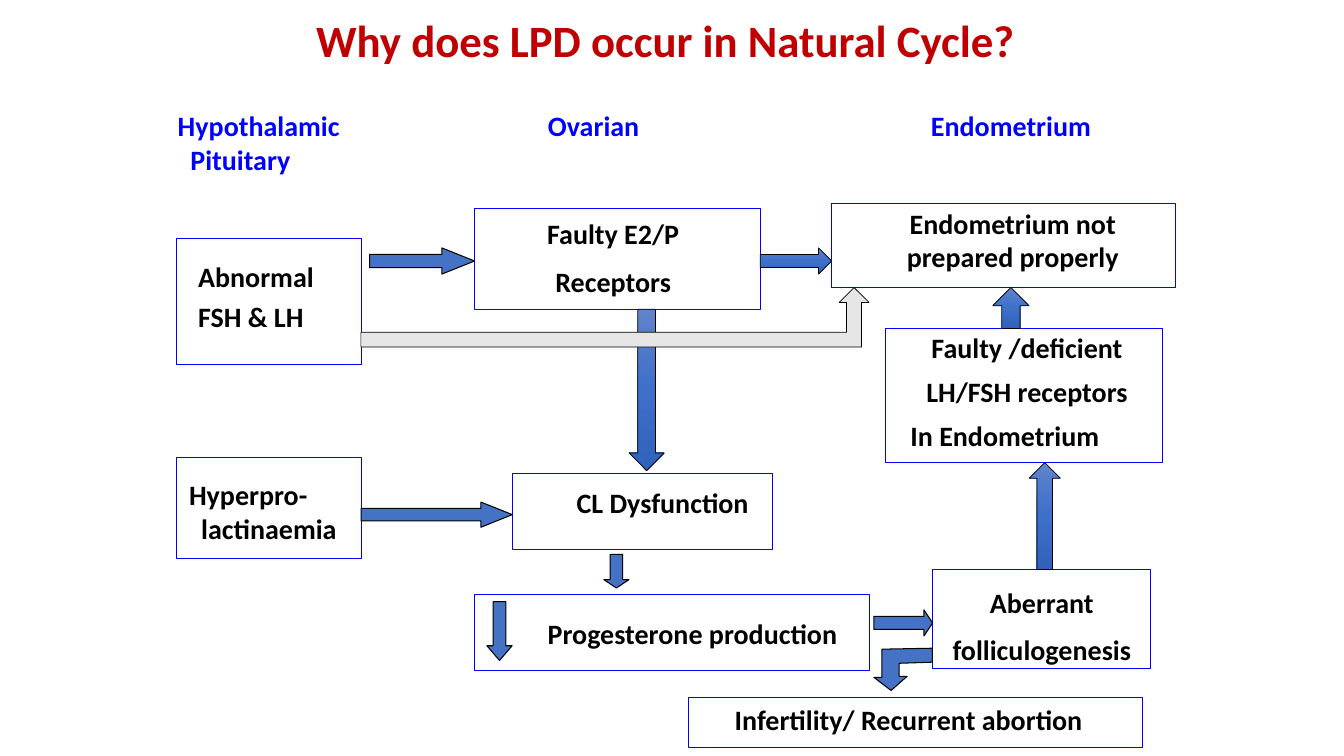
import copy
import pptx
import pptx.util
import pptx.dml.color
import pptx.enum.shapes
import pptx.enum.text
import pptx.oxml.ns

Pt = pptx.util.Pt
ALIGN = pptx.enum.text.PP_ALIGN
PRESET = pptx.enum.shapes.MSO_SHAPE

COLORS = {
    "title": "C00000", "heading": "0000FF", "text": "000000", "frame": "0000FF",
    "arrow": "4472C4", "outline": "000000", "bypass": "E7E6E6",
}
GRADIENT = [(0, "6183CB"), (0.5, "3E70CA"), (1, "3062BB")]
FONT = "Calibri"
LINE_HEIGHT = 24.4  # one line of 20 pt text

TITLE = "Why does LPD occur in Natural Cycle?"

# Headings: left, centre y, lines, indents
HEADINGS = [
    (127, 101.8, ["Hypothalamic", "Pituitary"], [0, 9]),
    (391.4, 89.3, ["Ovarian"], [0]),
    (665, 89.3, ["Endometrium"], [0]),
]

# Left-aligned labels: left, centre y, line pitch, lines, left indents
LEFT_LABELS = [
    (141.5, 211.8, 29.4, ["Abnormal", "FSH & LH"], [0, 0]),
    (135, 365, 24.4, ["Hyperpro-", "lactinaemia"], [0, 8.7]),
]

# Centred labels: centre x, centre y, line pitch, lines, right indents
CENTRED_LABELS = [
    (439.2, 183.6, 34.4, ["Faulty E2/P", "Receptors"], [2.4, 0]),
    (724.5, 171.4, 24.4, ["Endometrium not", "prepared properly"], [2, 0]),
    (733.6, 279.5, 31.8,
     ["Faulty /deficient", "LH/FSH receptors", "In Endometrium"], [0, 0, 31.5]),
    (473.3, 358.6, 24.4, ["CL Dysfunction"], [0]),
    (494.6, 452, 24.4, ["Progesterone production"], [0]),
    (747, 447, 34.4, ["Aberrant", "folliculogenesis"], [5.6, 0]),
    (649, 513.6, 24.4, ["Infertility/ Recurrent abortion"], [0]),
]

# Frames: left, top, width, height
FRAMES = [
    (126, 170.6, 132, 90),      # abnormal FSH & LH
    (126, 327, 132, 72),        # hyperprolactinaemia
    (339, 149, 204, 72),        # faulty receptors
    (594, 145.4, 246, 60),      # endometrium not prepared
    (366, 338.4, 186, 54),      # CL dysfunction
    (339, 424.8, 282, 54),      # progesterone production
    (632.2, 234.7, 198, 96),    # faulty endometrial receptors
    (666, 406.8, 156, 70.6),    # aberrant folliculogenesis
    (491.8, 498.2, 324, 36),    # infertility
]

# Solid arrows: preset, place, head length ratio
SOLID_ARROWS = [
    (PRESET.DOWN_ARROW, (347.8, 429.8, 18, 42), 0.583),
    (PRESET.DOWN_ARROW, (431.3, 396, 18, 24), 0.333),
    (PRESET.RIGHT_ARROW, (264, 177.1, 75, 18.7), 1.25),
    (PRESET.RIGHT_ARROW, (258, 358.6, 108, 18), 1.25),
    (PRESET.RIGHT_ARROW, (624.2, 435.6, 42, 18.7), 0.333),
]
SHADED_ARROWS = [
    (PRESET.DOWN_ARROW, (449.3, 221, 25.2, 115.2)),
    (PRESET.RIGHT_ARROW, (543, 177.1, 51, 18.7)),
    (PRESET.UP_ARROW, (709.2, 205.4, 25.9, 29.3)),
    (PRESET.UP_ARROW, (735.1, 330.5, 22.3, 76.3)),
]
BYPASS_ARROW = (257.8, 205.4, 362.9, 42.5)
ELBOW_ARROW = [
    (636.5, 493.2), (648, 483.1), (642.2, 483.1), (642.2, 473.8), (666, 473),
    (666, 463), (630, 463.7), (630, 483.8), (624.2, 483.8),
]


def rgb(name):
    return pptx.dml.color.RGBColor.from_string(COLORS.get(name, name))


def add_text(lines, *, left, middle, width, indents=(0,), pitch=LINE_HEIGHT,
             size=20, color="text", align=ALIGN.LEFT):
    """Text block whose lines are centred vertically on middle."""
    height = size * 1.22 + pitch * (len(lines) - 1)
    box = page.shapes.add_textbox(Pt(left), Pt(middle - height / 2), Pt(width), Pt(height))
    frame = box.text_frame
    frame.word_wrap = True
    frame.vertical_anchor = pptx.enum.text.MSO_ANCHOR.MIDDLE
    frame.margin_left = frame.margin_right = frame.margin_top = frame.margin_bottom = 0
    side = "marL" if align == ALIGN.LEFT else "marR"
    for index, (line, indent) in enumerate(zip(lines, indents)):
        para = frame.add_paragraph() if index else frame.paragraphs[0]
        para.alignment = align
        if index:
            para.space_before = Pt(round(pitch - LINE_HEIGHT, 2))
        if indent:
            para._p.get_or_add_pPr().set(side, str(int(Pt(indent))))
        span = para.add_run()
        span.text = line
        span.font.name, span.font.size, span.font.bold = FONT, Pt(size), True
        span.font.color.rgb = rgb(color)


def style(shape, fill=None, line="outline", weight=0.75):
    shape.shadow.inherit = False
    shape.line.color.rgb = rgb(line)
    shape.line.width = Pt(weight)
    if fill:
        shape.fill.solid()
        shape.fill.fore_color.rgb = rgb(fill)
    else:
        shape.fill.background()


def add_preset(preset, place, **look):
    shape = page.shapes.add_shape(preset, *(Pt(value) for value in place))
    style(shape, **look)
    return shape


def shade(shape):
    """Vertical three-stop gradient."""
    shape.fill.gradient()
    shape.fill.gradient_angle = 270
    stop_list = shape._element.spPr.find(".//" + pptx.oxml.ns.qn("a:gsLst"))
    stop_list.append(copy.deepcopy(stop_list[0]))
    for stop, (position, color) in zip(shape.fill.gradient_stops, GRADIENT):
        stop.position = position
        stop.color.rgb = rgb(color)


deck = pptx.Presentation()
deck.slide_width, deck.slide_height = Pt(960), Pt(540)
page = deck.slides.add_slide(deck.slide_layouts[6])

# Title and column headings
add_text([TITLE], left=120, middle=28, width=711, size=32, color="title", align=ALIGN.CENTER)
for left, middle, lines, indents in HEADINGS:
    add_text(lines, left=left, middle=middle, width=150, indents=indents,
             pitch=25, color="heading")

# Frames
for place in FRAMES:
    add_preset(PRESET.RECTANGLE, place, line="frame")

# Arrows
for preset, place, head in SOLID_ARROWS:
    arrow = add_preset(preset, place, fill="arrow")
    arrow.adjustments[1] = head
for preset, place in SHADED_ARROWS:
    shade(add_preset(preset, place, weight=0.5))
add_preset(PRESET.BENT_UP_ARROW, BYPASS_ARROW, fill="bypass", weight=0.5)

points = [(Pt(x), Pt(y)) for x, y in ELBOW_ARROW]
builder = page.shapes.build_freeform(*points[0])
builder.add_line_segments(points[1:], close=True)
style(builder.convert_to_shape(), fill="arrow")

# Labels
for left, middle, pitch, lines, indents in LEFT_LABELS:
    add_text(lines, left=left, middle=middle, width=115, pitch=pitch, indents=indents)
for centre, middle, pitch, lines, indents in CENTRED_LABELS:
    width = 270 if len(lines) == 1 else 180
    add_text(lines, left=centre - width / 2, middle=middle, width=width,
             pitch=pitch, indents=indents, align=ALIGN.CENTER)

deck.save("out.pptx")
